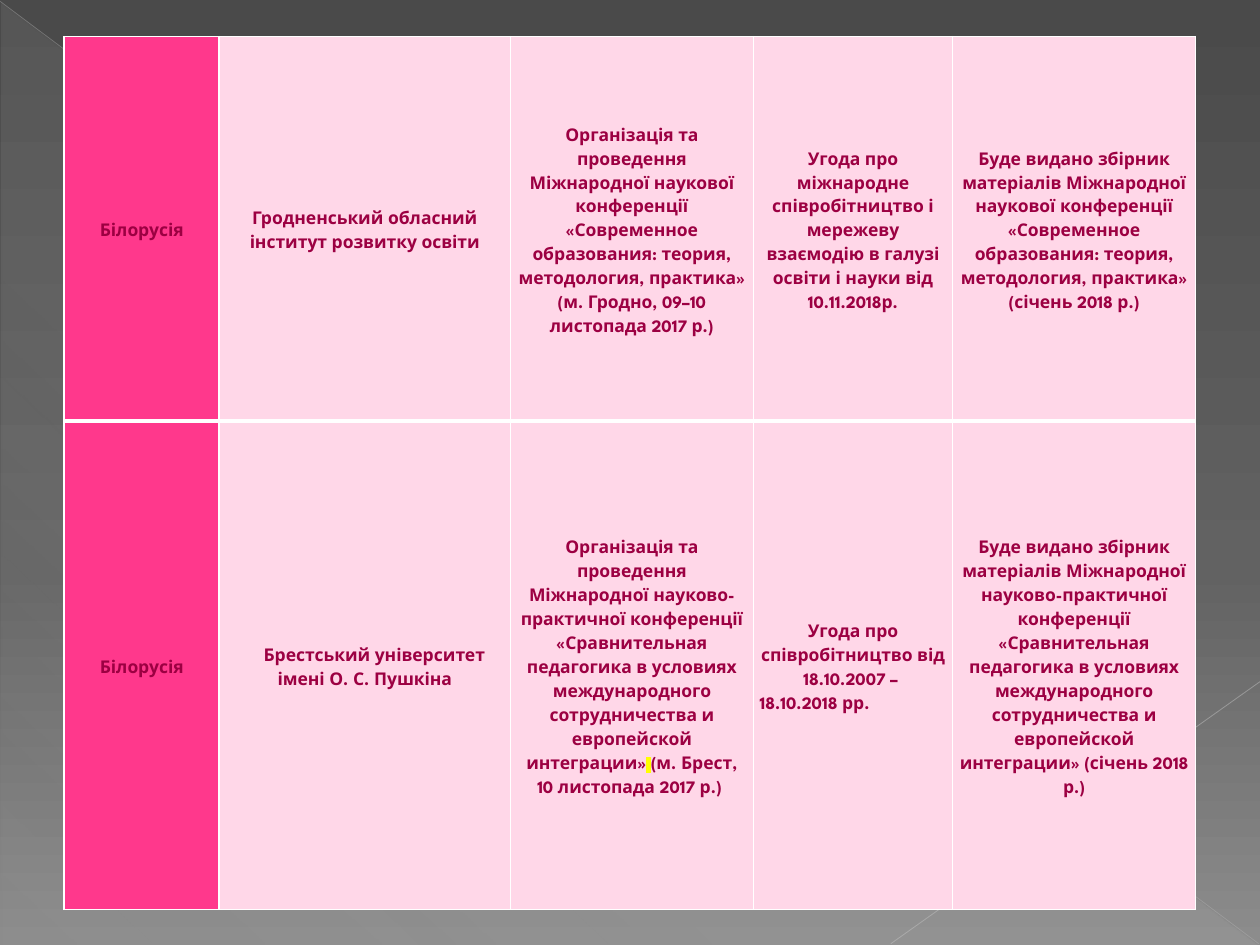
from lxml.etree import SubElement
from pptx import Presentation
from pptx.dml.color import RGBColor
from pptx.enum.shapes import MSO_CONNECTOR, MSO_SHAPE
from pptx.enum.text import MSO_ANCHOR, PP_ALIGN
from pptx.oxml.ns import qn
from pptx.util import Inches, Pt


def paint(parent, color, opacity=100):
    tint = SubElement(parent, qn("a:srgbClr"), val=str(RGBColor.from_string(color)))
    if opacity < 100:
        SubElement(tint, qn("a:alpha"), val=str(opacity * 1000))


def add_span(para, text, size=10, color="9C0042", font="League Spartan", bold=True, highlight=None):
    span = para.add_run()
    span.text = text
    span.font.size = Pt(size)
    span.font.bold = bold
    span.font.color.rgb = RGBColor.from_string(color)
    span.font.name = font
    if highlight:
        properties = span.font._element
        marker = SubElement(properties, qn("a:highlight"))
        paint(marker, highlight)
        properties.find(qn("a:latin")).addprevious(marker)


deck = Presentation()
deck.slide_width = Inches(10)
deck.slide_height = Inches(7.5)
page = deck.slides.add_slide(deck.slide_layouts[6])

triangle = page.shapes.add_shape(
    MSO_SHAPE.RIGHT_TRIANGLE, Inches(0.01), Inches(0.02), Inches(9.98), Inches(7.48)
)
triangle.shadow.inherit = False
triangle.line.fill.background()

gradients = [
    (triangle.fill, triangle.element, 133, [(0, "D2D2D2", 10), (70, "D2D2D2", 8), (100, "D2D2D2", 1)]),
    (page.background.fill, page.element, 90, [(0, "4A4A4A", 100), (60, "626262", 100), (100, "8C8C8C", 100)]),
]
for fill, element, angle, stops in gradients:
    fill.gradient()
    fill.gradient_angle = 360 - angle
    stop_list = next(element.iter(qn("a:gsLst")))
    for old_stop in list(stop_list):
        stop_list.remove(old_stop)
    for position, color, opacity in stops:
        paint(SubElement(stop_list, qn("a:gs"), pos=str(position * 1000)), color, opacity)

diagonals = [
    (0, 0.01, 9.99, 7.49, "BFBFBF", 0.39, 35),
    (10, 5.41, 7.07, 7.49, "C6C6C6", 0.47, 45),
]
for left, top, right, bottom, color, width, opacity in diagonals:
    diagonal = page.shapes.add_connector(
        MSO_CONNECTOR.STRAIGHT, Inches(left), Inches(top), Inches(right), Inches(bottom)
    )
    diagonal.line.width = Pt(width)
    diagonal.line.color.rgb = RGBColor.from_string(color)
    tint = next(diagonal.element.iter(qn("a:srgbClr")))
    SubElement(tint, qn("a:alpha"), val=str(opacity * 1000))
    SubElement(diagonal.element.spPr, qn("a:effectLst"))

column_widths = [1.23, 2.31, 1.93, 1.58, 1.93]
row_heights = [3.05, 3.88]
agreements = [
    [
        ["Білорусія"],
        ["Гродненський обласний інститут розвитку освіти"],
        ["Організація та проведення Міжнародної наукової конференції «Современное образования: теория, "
         "методология, практика» (м. Гродно, 09–10 листопада 2017 р.)"],
        ["Угода про міжнародне співробітництво і мережеву взаємодію в галузі освіти і науки від 10.11.2018р."],
        ["Буде видано збірник",
         "матеріалів Міжнародної наукової конференції «Современное образования: теория, "
         "методология, практика» (січень 2018 р.)"],
    ],
    [
        ["Білорусія"],
        ["Брестський університет імені О. С. Пушкіна"],
        ["Організація та проведення Міжнародної науково-практичної конференції «Сравнительная педагогика "
         "в условиях международного сотрудничества и европейской интеграции»"],
        ["Угода про співробітництво від 18.10.2007 – ", "18.10.2018 рр."],
        ["Буде видано збірник матеріалів Міжнародної науково-практичної конференції «Сравнительная педагогика "
         "в условиях международного сотрудничества и европейской интеграции» (січень 2018 р.)"],
    ],
]
border_widths = [
    {"lnL": 1, "lnR": 1, "lnT": 1, "lnB": 3},
    {"lnL": 1, "lnR": 1, "lnT": 3, "lnB": 1},
]

table = page.shapes.add_table(
    len(row_heights), len(column_widths), Inches(0.51), Inches(0.29),
    Inches(sum(column_widths)), Inches(sum(row_heights)),
).table
table.first_row = False
table.horz_banding = False
for column, width in zip(table.columns, column_widths):
    column.width = Inches(width)
for row, height in zip(table.rows, row_heights):
    row.height = Inches(height)

for row_index, agreement in enumerate(agreements):
    for column_index, paragraphs in enumerate(agreement):
        cell = table.cell(row_index, column_index)
        cell.vertical_anchor = MSO_ANCHOR.MIDDLE
        cell.margin_left = cell.margin_right = Inches(0.05)
        cell.margin_top = cell.margin_bottom = 0
        cell_properties = cell._tc.get_or_add_tcPr()
        for side, width in border_widths[row_index].items():
            border = SubElement(cell_properties, qn(f"a:{side}"), w=str(Pt(width)))
            paint(SubElement(border, qn("a:solidFill")), "FFFFFF")
        cell.fill.solid()
        cell.fill.fore_color.rgb = RGBColor.from_string("FFD7E8" if column_index else "FF388C")
        for index, text in enumerate(paragraphs):
            para = cell.text_frame.add_paragraph() if index else cell.text_frame.paragraphs[0]
            para.alignment = PP_ALIGN.CENTER
            para.line_spacing = 1.5
            add_span(para, text)

university = table.cell(1, 1).text_frame.paragraphs[0]
university._p.get_or_add_pPr().set("indent", str(Inches(0.15)))

conference = table.cell(1, 2).text_frame.paragraphs[0]
add_span(conference, " ", highlight="FFFF00")
add_span(conference, "(м. Брест, 10 листопада 2017 р.) ")

end_date = table.cell(1, 3).text_frame.paragraphs[1]
end_date.alignment = PP_ALIGN.LEFT

deck.save("out.pptx")
